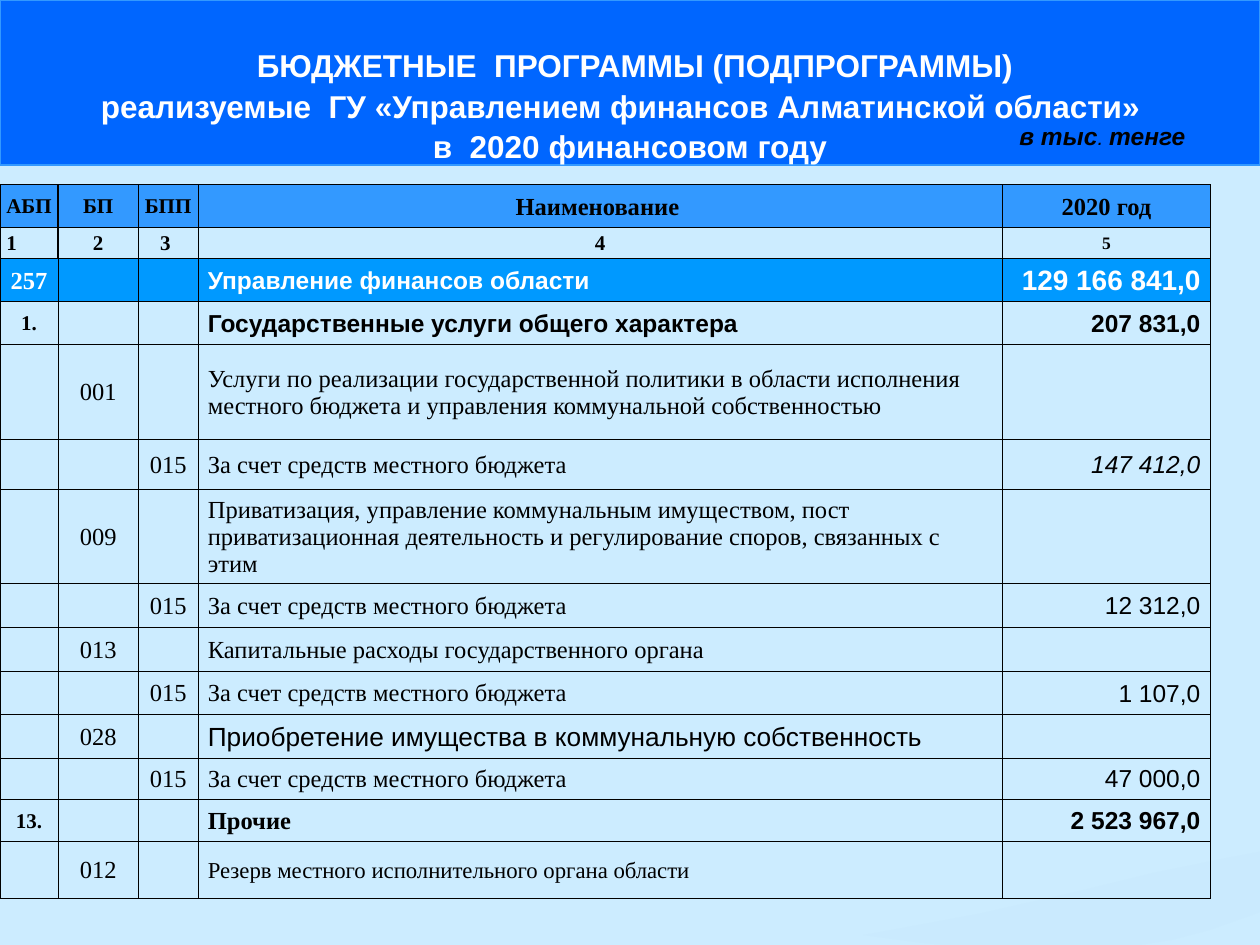
"""Build the budget programme slide of a regional finance department."""
from dataclasses import dataclass

from lxml import etree
from pptx import Presentation, util as u
from pptx.dml import color
from pptx.enum import shapes, text
from pptx.oxml import ns

ARIAL, TIMES = "Arial", "Times New Roman"
LEFT, CENTER, RIGHT = text.PP_ALIGN.LEFT, text.PP_ALIGN.CENTER, text.PP_ALIGN.RIGHT
MIDDLE, BOTTOM = text.MSO_ANCHOR.MIDDLE, text.MSO_ANCHOR.BOTTOM
LOCAL_FUNDS = "За счет средств местного бюджета"

COLUMN_WIDTHS = [1.17, 1.62, 1.2, 16.22, 4.19]
LEVEL_FILLS = {"head": "3399FF", "total": "0099FF"}
BOLD_SMALL = dict(size=12, bold=True)
HEADING = dict(font=ARIAL, bold=True)
WHITE = dict(colour="FFFFFF", bold=True)
LEVEL_FORMATS = {
    "head": (BOLD_SMALL, dict(bold=True), dict(bold=True)),
    "number": (BOLD_SMALL, BOLD_SMALL, dict(size=10, bold=True)),
    "total": (WHITE, dict(WHITE, font=ARIAL), dict(WHITE, font=ARIAL, size=16)),
    "section": (BOLD_SMALL, HEADING, HEADING),
    "item": ({}, {}, dict(font=ARIAL)),
}
BUDGET = [
    (0.87, "head", ("АБП", "БП", "БПП", "Наименование", "2020 год"), {}),
    (0.62, "number", ("1", "2", "3", "4", "5"), {}),
    (0.87, "total", ("257", "", "", "Управление финансов области", "129 166 841,0"), {}),
    (0.87, "section", ("1.", "", "", "Государственные услуги общего характера", "207 831,0"), {}),
    (1.9, "item", ("", "001", "", "Услуги по реализации государственной политики в области исполнения "
                   "местного бюджета и управления коммунальной собственностью", ""), {}),
    (1.02, "item", ("", "", "015", LOCAL_FUNDS, "147 412,0"), {4: dict(italic=True)}),
    (1.9, "item", ("", "009", "", "Приватизация, управление коммунальным имуществом, пост приватизационная "
                   "деятельность и регулирование споров, связанных с этим", ""), {}),
    (0.88, "item", ("", "", "015", LOCAL_FUNDS, "12 312,0"), {}),
    (0.88, "item", ("", "013", "", "Капитальные расходы государственного органа", ""), {}),
    (0.87, "item", ("", "", "015", LOCAL_FUNDS, "1 107,0"), {}),
    (0.88, "item", ("", "028", "", "Приобретение имущества в коммунальную собственность", ""),
     {3: dict(font=ARIAL, size=15)}),
    (0.83, "item", ("", "", "015", LOCAL_FUNDS, "47 000,0"), {}),
    (0.85, "section", ("13.", "", "", "Прочие", "2 523 967,0"), {3: dict(font=TIMES)}),
    (1.15, "item", ("", "012", "", "Резерв местного исполнительного органа области", ""),
     {3: dict(size=13)}),
]
TITLE = [
    ("БЮДЖЕТНЫЕ  ПРОГРАММЫ (ПОДПРОГРАММЫ)", "marL", 0.2, 0),
    ("реализуемые  ГУ «Управлением финансов Алматинской области»", "marR", 0.38, 2.2),
    ("в  2020 финансовом году", "marR", 0, 1.2),
]
UNIT = [
    ("в тыс", dict(size=14, bold=True)),
    (". ", dict(size=12)),
    ("тенге", dict(size=14, bold=True)),
]
WAVE = [(2540, 1717), (2471, 1730), (2324, 1760), (2177, 1796), (1974, 1842),
        (1796, 1875), (1740, 1885), (1852, 1900), (1905, 1905), (2296, 1905),
        (2362, 1895), (2438, 1875), (2540, 1839)]


def rgb(value):
    return color.RGBColor.from_string(value)


def write(paragraph, words, font=TIMES, size=14, colour="000000", bold=False, italic=False):
    run = paragraph.add_run()
    run.text = words
    run.font.name, run.font.size = font, u.Pt(size)
    run.font.bold, run.font.italic = bold, italic
    run.font.color.rgb = rgb(colour)


def fill(target, value):
    target.fill.solid()
    target.fill.fore_color.rgb = rgb(value)


def border(cell, side, points):
    line = etree.SubElement(cell._tc.get_or_add_tcPr(), ns.qn(f"a:ln{side}"), w=str(u.Pt(points)))
    solid = etree.SubElement(line, ns.qn("a:solidFill"))
    etree.SubElement(solid, ns.qn("a:srgbClr"), val="000000")


@dataclass
class BudgetSlide:
    slide: object
    band: str = "0066FF"
    band_line: str = "3399FF"
    wave_colour: str = "C6E7FC"

    def background(self, value):
        fill(self.slide.background, value)

    def wave(self, points, opacity):
        builder = self.slide.shapes.build_freeform(*points[0], scale=u.Cm(0.01))
        builder.add_line_segments(points[1:])
        shape = builder.convert_to_shape()
        shape.shadow.inherit = False
        fill(shape, self.wave_colour)
        shape.line.fill.background()
        tint = shape._element.spPr.find(".//" + ns.qn("a:srgbClr"))
        etree.SubElement(tint, ns.qn("a:alpha"), val=str(opacity * 1000))

    def table(self, left, top, widths, rows):
        heights = [row[0] for row in rows]
        grid = self.slide.shapes.add_table(len(rows), len(widths), u.Cm(left), u.Cm(top),
                                           u.Cm(sum(widths)), u.Cm(sum(heights))).table
        grid.horz_banding = grid.first_row = False
        for column, width in zip(grid.columns, widths):
            column.width = u.Cm(width)
        for index, (height, level, values, overrides) in enumerate(rows):
            grid.rows[index].height = u.Cm(height)
            for column, value in enumerate(values):
                style = LEVEL_FORMATS[level][max(0, column - 2)] | overrides.get(column, {})
                self.cell(grid.cell(index, column), column, level, value, style)

    def cell(self, cell, column, level, value, style):
        top_rows = level in ("head", "number")
        inset = 0.2 if column > 2 and not top_rows else 0.03
        cell.margin_left = cell.margin_right = u.Cm(inset)
        cell.margin_top, cell.margin_bottom = u.Cm(0.03), 0
        cell.vertical_anchor = MIDDLE
        paragraph = cell.text_frame.paragraphs[0]
        paragraph.alignment = CENTER if top_rows or column < 3 else (LEFT, RIGHT)[column - 3]
        if level == "number" and column == 0:
            paragraph.alignment = LEFT
            cell.margin_left = u.Cm(0.13)
        if (level, column) in (("number", 2), ("head", 3)):
            cell.margin_right = u.Cm(0.14)
        if value:
            write(paragraph, value, **style)
        for side in "LRTB":
            thick = top_rows and (column, side) in ((0, "R"), (1, "L"), (1, "R"), (2, "L"))
            border(cell, side, 1 if thick else 0.5)
        if level in LEVEL_FILLS:
            fill(cell, LEVEL_FILLS[level])
        else:
            cell.fill.background()

    def title(self, width, height, lines):
        banner = self.slide.shapes.add_shape(shapes.MSO_SHAPE.RECTANGLE, 0, 0, u.Cm(width), u.Cm(height))
        banner.shadow.inherit = False
        fill(banner, self.band)
        banner.line.color.rgb = rgb(self.band_line)
        banner.line.width = u.Pt(0.75)
        frame = banner.text_frame
        frame.word_wrap, frame.vertical_anchor, frame.margin_bottom = True, BOTTOM, 0
        for index, (words, margin, shift, gap) in enumerate(lines):
            paragraph = frame.add_paragraph() if index else frame.paragraphs[0]
            paragraph.alignment = CENTER
            paragraph.space_before = u.Pt(gap)
            paragraph._p.get_or_add_pPr().set(margin, str(u.Cm(shift)))
            write(paragraph, words, font=ARIAL, size=18, colour="FFFFFF", bold=True)

    def caption(self, left, top, width, height, parts):
        frame = self.slide.shapes.add_textbox(u.Cm(left), u.Cm(top), u.Cm(width), u.Cm(height)).text_frame
        frame.word_wrap = True
        for words, style in parts:
            write(frame.paragraphs[0], words, font=ARIAL, italic=True, **style)


def main():
    deck = Presentation()
    deck.slide_width, deck.slide_height = u.Cm(25.4), u.Cm(19.05)
    page = BudgetSlide(deck.slides.add_slide(deck.slide_layouts[6]))
    page.background("CCECFF")
    page.wave(WAVE, opacity=30)
    page.table(0, 3.72, COLUMN_WIDTHS, BUDGET)
    page.title(25.4, 3.33, TITLE)
    page.caption(20.3, 2.31, 4.39, 0.84, UNIT)
    deck.save("out.pptx")


if __name__ == "__main__":
    main()
